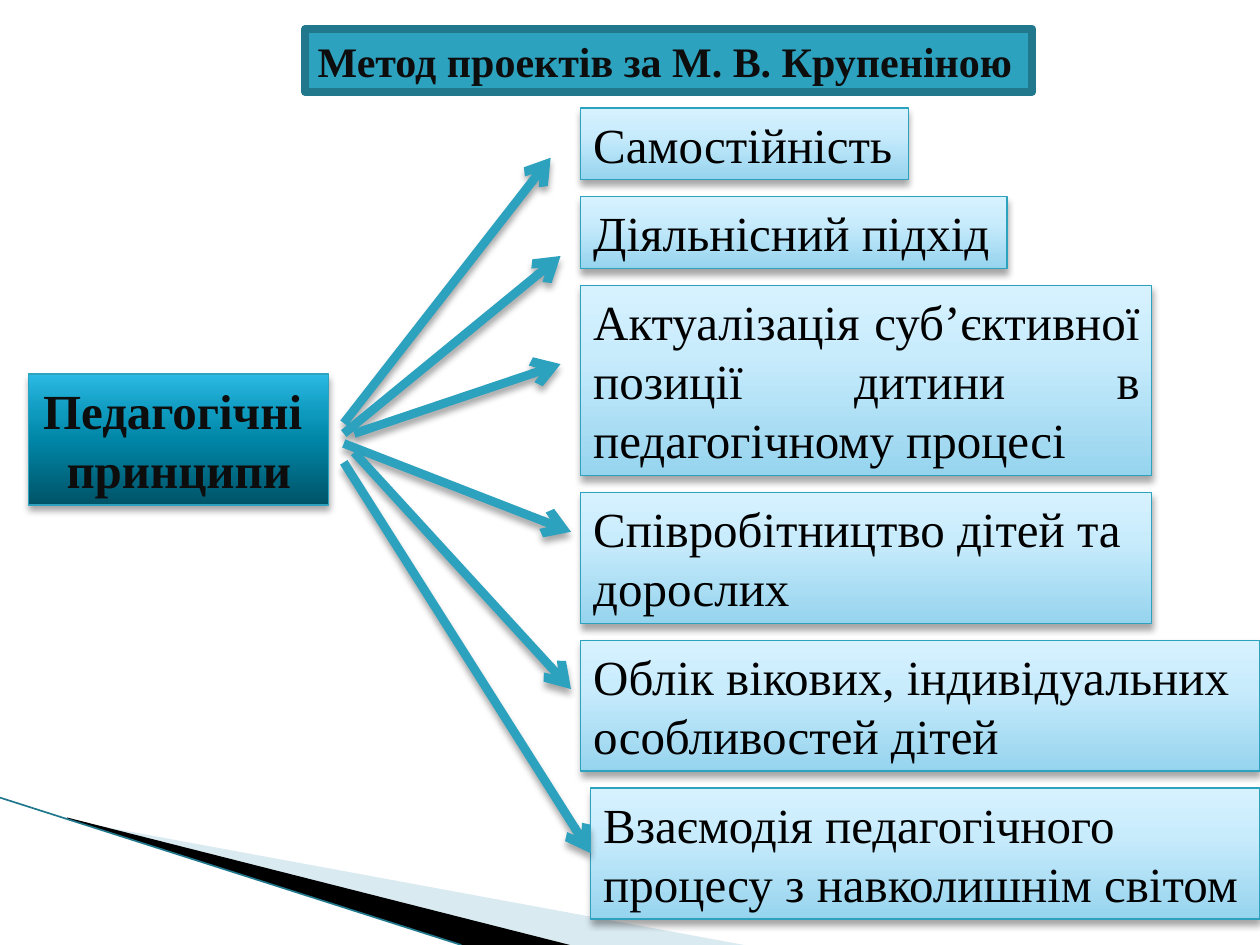
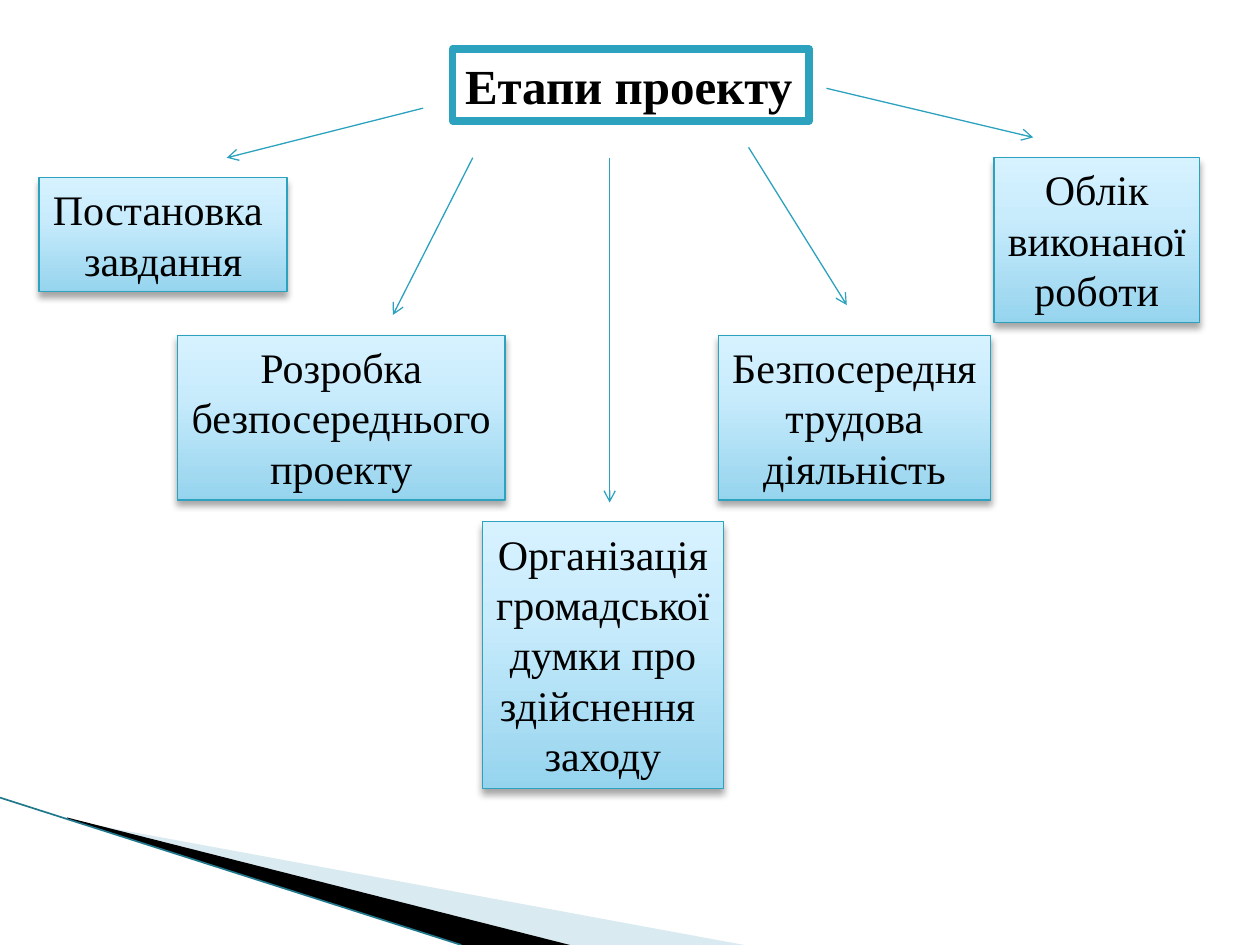
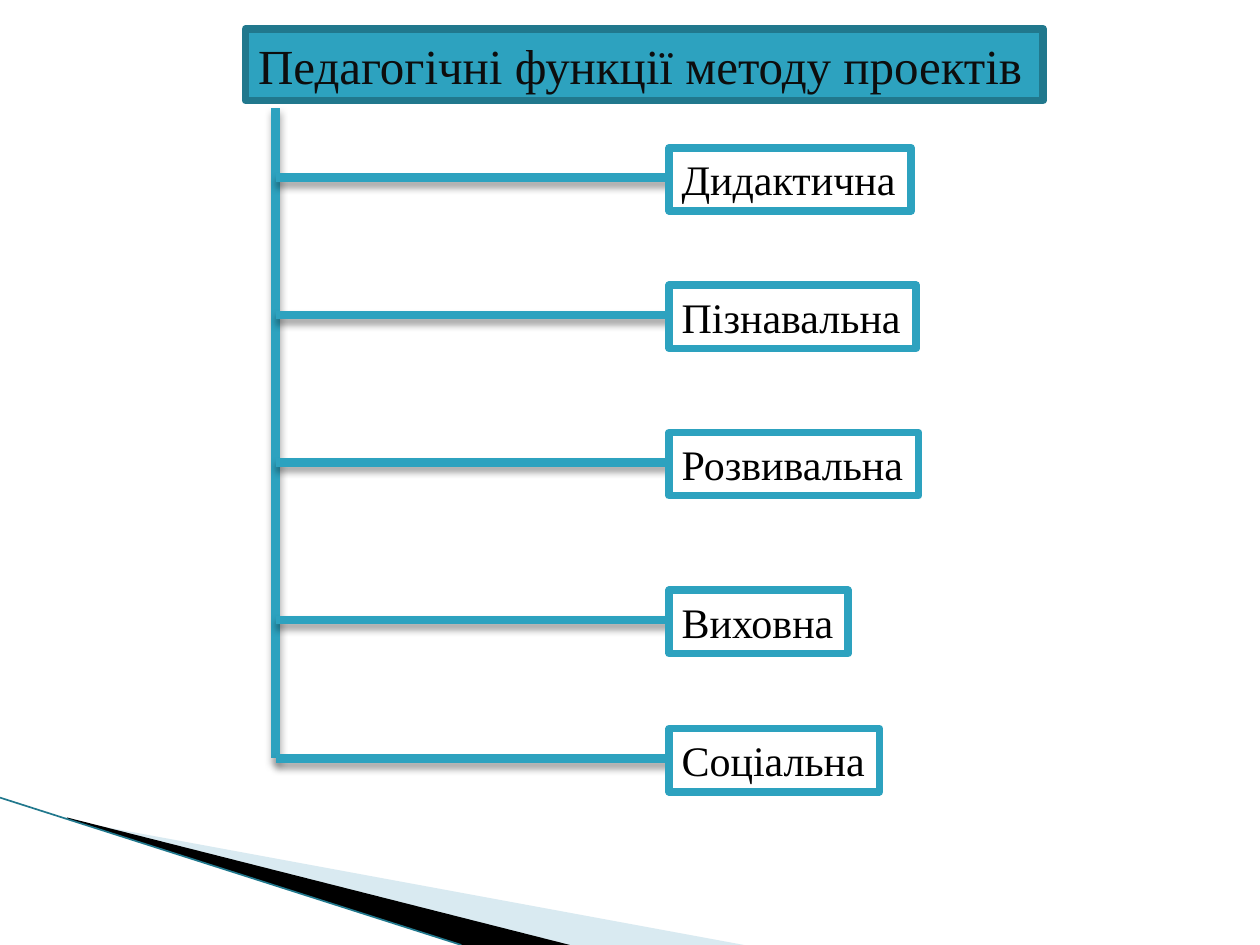
import pptx
import pptx.util
from lxml import etree
from pptx.dml.color import RGBColor
from pptx.enum.shapes import MSO_CONNECTOR, MSO_SHAPE
from pptx.enum.text import MSO_ANCHOR, MSO_AUTO_SIZE, PP_ALIGN
from pptx.oxml.ns import qn

Cm, Pt = pptx.util.Cm, pptx.util.Pt

FONT = "Times New Roman"
TEAL = RGBColor(0x2D, 0xA2, 0xBF)
DARK_TEAL = RGBColor(0x21, 0x78, 0x8D)
PALE_BLUE = RGBColor(0xA0, 0xCB, 0xDC)
BLACK = RGBColor(0x00, 0x00, 0x00)
INK = RGBColor(0x0D, 0x0D, 0x0D)
WHITE = RGBColor(0xFF, 0xFF, 0xFF)

# Gradient stops: percent, colour; they run from bottom to top
LIGHT = [(0, RGBColor(0x96, 0xD4, 0xEE)), (65, RGBColor(0xC9, 0xEC, 0xFC)),
         (100, RGBColor(0xD7, 0xF2, 0xFF))]
DEEP = [(0, RGBColor(0x00, 0x53, 0x67)), (50, RGBColor(0x00, 0x86, 0xA7)),
        (70, RGBColor(0x0E, 0x9A, 0xBE)), (100, RGBColor(0x2C, 0xB9, 0xE3))]

THICK, FRAME, THIN = 5, 4.33, 0.75

# All places and sizes below are in centimetres
PALE_WEDGE = [(1.4, 16.54), (15, 19.05), (11.45, 19.05), (1.4, 16.51)]
BLACK_WEDGE = [(1.35, 16.48), (11.49, 19.05), (9.3, 19.05), (1.37, 16.51)]
WEDGE_EDGE = ((0, 16.08), (9.3, 19.05))

# Left, width, lines, text
PRINCIPLES_TOP, PRINCIPLES_GAP = 2.18, 0.34
PRINCIPLES = [
    (11.71, 6.6, 1, "Самостійність"),
    (11.71, 8.59, 1, "Діяльнісний підхід"),
    (11.71, 11.51, 3,
     "Актуалізація суб’єктивної позиції дитини в педагогічному процесі"),
    (11.71, 11.51, 2, "Співробітництво дітей та дорослих"),
    (11.71, 13.69, 2, "Облік вікових, індивідуальних особливостей дітей"),
    (11.91, 13.49, 2, "Взаємодія педагогічного процесу з навколишнім світом"),
]
PRINCIPLE_ARROWS = [
    ((6.93, 8.53), (11.1, 3.18)),
    ((6.93, 8.74), (11.3, 5.16)),
    ((7.14, 8.74), (11.3, 7.34)),
    ((6.93, 8.94), (11.51, 10.72)),
    ((7.14, 9.12), (11.51, 13.89)),
    ((6.93, 9.32), (11.91, 17.2)),
]

# Left, top, width, text
STAGES = [
    (0.79, 3.58, 5, "Постановка \nзавдання"),
    (3.58, 6.76, 6.6, "Розробка\nбезпосереднього\nпроекту"),
    (9.73, 10.52, 4.85,
     "Організація\nгромадської\nдумки про\nздійснення \nзаходу"),
    (14.48, 6.76, 5.49, "Безпосередня\nтрудова\nдіяльність"),
    (20.04, 3.18, 4.14, "Облік\nвиконаної\nроботи"),
]
STAGE_ARROWS = [
    ((8.53, 2.18), (4.57, 3.18)),
    ((9.53, 3.18), (7.92, 6.35)),
    ((12.29, 3.18), (12.29, 10.13)),
    ((15.09, 2.97), (17.07, 6.15)),
    ((16.66, 1.78), (20.83, 2.77)),
]

# Branch height, box width, text
STEM_X, STEM_TOP, FUNCTION_X = 5.56, 2.18, 13.49
FUNCTIONS = [
    (3.58, 4.88, "Дидактична"),
    (6.35, 4.98, "Пізнавальна"),
    (9.32, 5.03, "Розвивальна"),
    (12.5, 3.61, "Виховна"),
    (15.29, 4.24, "Соціальна"),
]


def text_height(lines, size):
    return Cm(0.25) + Pt(1.21 * size * lines)


def set_effects(sp, shadow):
    effects = etree.SubElement(sp.element.spPr, qn("a:effectLst"))
    if shadow:
        outer = etree.SubElement(effects, qn("a:outerShdw"), blurRad=str(Pt(4)),
                                 dist=str(Pt(3)), dir="5400000", rotWithShape="0")
        color = etree.SubElement(outer, qn("a:srgbClr"), val=str(BLACK))
        etree.SubElement(color, qn("a:alpha"), val="35000")


def fill_gradient(sp, stops):
    sp.fill.gradient()
    sp.fill.gradient_angle = 90
    stop_list = sp.element.spPr.find(qn("a:gradFill")).find(qn("a:gsLst"))
    for stop in list(stop_list):
        stop_list.remove(stop)
    for percent, color in stops:
        stop = etree.SubElement(stop_list, qn("a:gs"), pos=str(percent * 1000))
        etree.SubElement(stop, qn("a:srgbClr"), val=str(color))


def format_box(sp, text, size, fill, line, line_width, color=BLACK, bold=False,
               align=PP_ALIGN.LEFT, wrap=False,
               auto_size=MSO_AUTO_SIZE.SHAPE_TO_FIT_TEXT):
    """Style a box; a list as fill means gradient stops and a shadow."""
    is_gradient = isinstance(fill, list)
    if is_gradient:
        fill_gradient(sp, fill)
    else:
        sp.fill.solid()
        sp.fill.fore_color.rgb = fill
    sp.line.color.rgb = line
    sp.line.width = Pt(line_width)
    set_effects(sp, is_gradient)
    tf = sp.text_frame
    tf.text = text
    tf.word_wrap = wrap
    tf.auto_size = auto_size
    tf.vertical_anchor = MSO_ANCHOR.TOP
    for p in tf.paragraphs:
        p.alignment = align
        p.font.name = FONT
        p.font.size = Pt(size)
        p.font.bold = bold
        p.font.color.rgb = color


def add_box(slide, left, top, width, text, size, fill, line_width=THIN,
            lines=None, **style):
    """Add a box with its left, top and width as lengths, as tall as its text."""
    height = text_height(lines or text.count("\n") + 1, size)
    sp = slide.shapes.add_shape(MSO_SHAPE.RECTANGLE, left, top, width, height)
    format_box(sp, text, size, fill, TEAL, line_width, **style)
    return sp


def add_line(slide, start, end, width, color=TEAL, arrow=False, shadow=False):
    line = slide.shapes.add_connector(MSO_CONNECTOR.STRAIGHT,
                                      *[Cm(v) for v in start + end])
    line.line.color.rgb = color
    line.line.width = Pt(width)
    if arrow:
        etree.SubElement(line.element.spPr.get_or_add_ln(), qn("a:tailEnd"),
                         type="arrow")
    set_effects(line, shadow)
    return line


def add_wedge(slide, points, color, opacity=100):
    (x, y), *rest = [(Cm(x), Cm(y)) for x, y in points]
    builder = slide.shapes.build_freeform(x, y)
    builder.add_line_segments(rest)
    sp = builder.convert_to_shape()
    sp.shadow.inherit = False
    sp.fill.solid()
    sp.fill.fore_color.rgb = color
    sp.line.fill.background()
    if opacity < 100:
        clr = sp.element.spPr.find(qn("a:solidFill"))[0]
        etree.SubElement(clr, qn("a:alpha"), val=str(opacity * 1000))
    return sp


def decorate_layout(layout, slide):
    """Draw the corner wedges on a slide and move them behind its layout."""
    parts = [add_wedge(slide, PALE_WEDGE, PALE_BLUE, 40),
             add_wedge(slide, BLACK_WEDGE, BLACK),
             add_line(slide, *WEDGE_EDGE, 0.95, DARK_TEAL)]
    for i, part in enumerate(parts):
        layout.shapes.element.insert(2 + i, part.element)


def add_title(slide, left, top, width, text, size, fill=TEAL, line=DARK_TEAL,
              color=INK, bold=False):
    """Place the title in a frame of fixed height."""
    sp = slide.shapes.title
    sp.left, sp.top, sp.width = Cm(left), Cm(top), Cm(width)
    sp.height = text_height(1, size)
    format_box(sp, text, size, fill, line, FRAME, color=color, bold=bold,
               wrap=True, auto_size=MSO_AUTO_SIZE.NONE)


def build_principles(slide):
    add_title(slide, 6.15, 0.58, 14.66, "Метод проектів за М. В. Крупеніною", 24,
              bold=True)
    add_box(slide, Cm(0.58), Cm(7.54), Cm(6.05), "Педагогічні \nпринципи", 28, DEEP,
            color=INK, bold=True, align=PP_ALIGN.CENTER)
    top = Cm(PRINCIPLES_TOP)
    for left, width, lines, text in PRINCIPLES:
        align = PP_ALIGN.JUSTIFY if lines == 3 else PP_ALIGN.LEFT
        sp = add_box(slide, Cm(left), top, Cm(width), text, 28, LIGHT, lines=lines,
                     align=align, wrap=lines > 1)
        top += sp.height + Cm(PRINCIPLES_GAP)
    for start, end in PRINCIPLE_ARROWS:
        add_line(slide, start, end, THICK, arrow=True, shadow=True)


def build_stages(slide):
    add_title(slide, 9.12, 0.99, 7.19, "Етапи проекту", 28, WHITE, TEAL, BLACK, True)
    for left, top, width, text in STAGES:
        add_box(slide, Cm(left), Cm(top), Cm(width), text, 24, LIGHT,
                align=PP_ALIGN.CENTER)
    for start, end in STAGE_ARROWS:
        add_line(slide, start, end, THIN, arrow=True)


def build_functions(slide):
    add_title(slide, 4.95, 0.58, 16.08, "Педагогічні функції методу проектів", 28)
    add_line(slide, (STEM_X, STEM_TOP), (STEM_X, FUNCTIONS[-1][0]), THICK, shadow=True)
    for y, width, text in FUNCTIONS:
        add_line(slide, (STEM_X, y), (FUNCTION_X, y), THICK, shadow=True)
        add_box(slide, Cm(FUNCTION_X), Cm(y - 0.6), Cm(width), text, 24, WHITE, FRAME)


def main():
    prs = pptx.Presentation()
    prs.slide_width, prs.slide_height = Cm(25.4), Cm(19.05)
    layout = prs.slide_layouts.get_by_name("Title Only")
    builders = [build_principles, build_stages, build_functions]
    slides = [prs.slides.add_slide(layout) for _ in builders]
    decorate_layout(layout, slides[0])
    for build, slide in zip(builders, slides):
        build(slide)
    prs.save("out.pptx")


if __name__ == "__main__":
    main()
